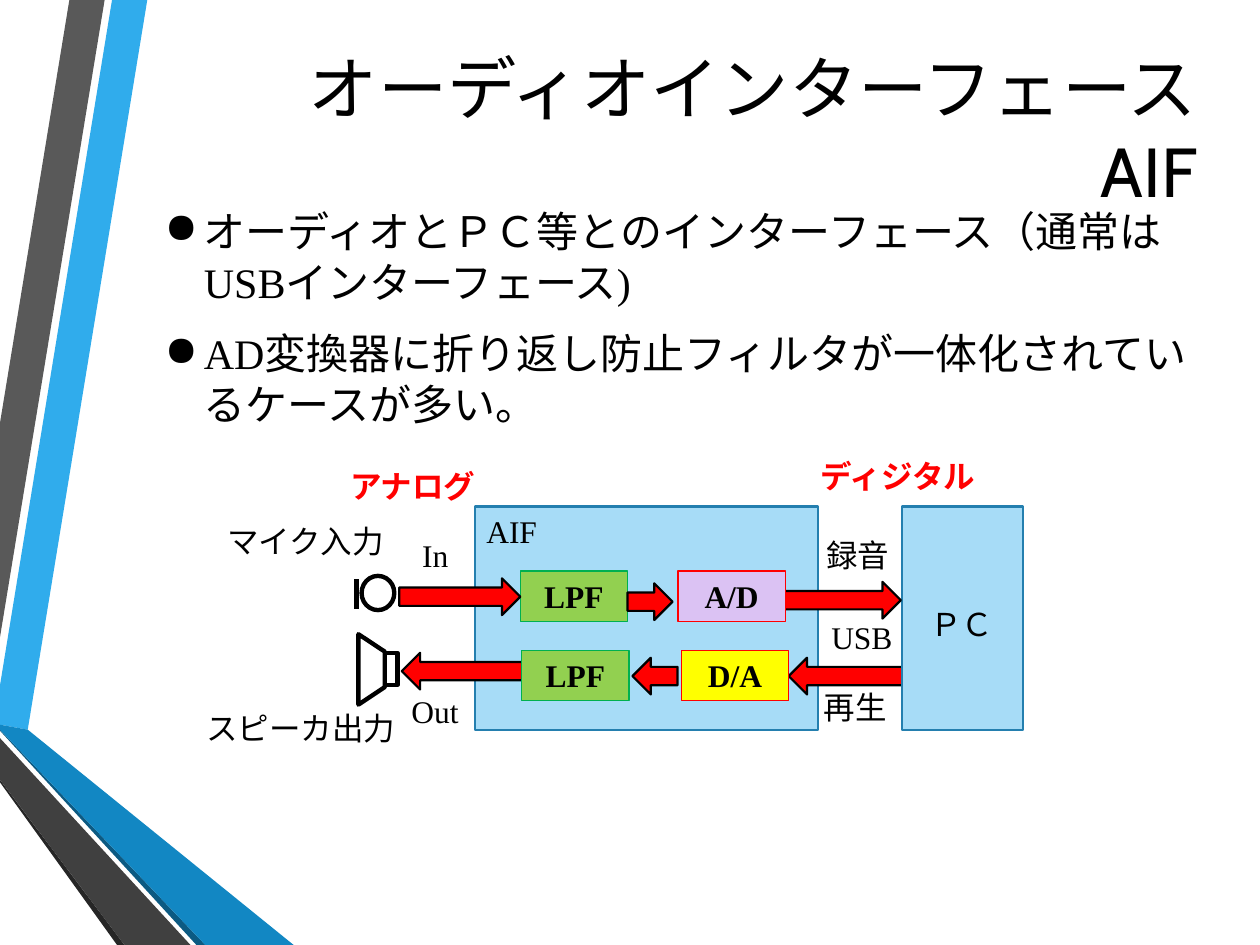
from dataclasses import dataclass

from lxml.etree import SubElement
from pptx import Presentation
from pptx.dml.color import RGBColor
from pptx.enum.shapes import MSO_CONNECTOR, MSO_SHAPE
from pptx.enum.text import MSO_ANCHOR, PP_ALIGN
from pptx.oxml.ns import qn
from pptx.util import Cm, Pt


@dataclass(frozen=True)
class Theme:
    black: str = "000000"
    white: str = "FFFFFF"
    red: str = "FF0000"
    sky: str = "30ACEC"
    blue: str = "1287C3"
    navy: str = "0C5A82"
    gray: str = "595959"
    coal: str = "404040"
    soot: str = "262626"
    pale: str = "A7DCF7"
    edge: str = "247FAF"
    lime: str = "92D050"
    green: str = "00B050"
    lilac: str = "DBC2F3"
    yellow: str = "FFFF00"
    sans: str = "Cabin"
    serif: str = "Times New Roman"
    title: float = 39.6
    body: float = 24
    label: float = 18
    thin: float = 0.75
    line: float = 1.25
    thick: float = 2.5


THEME = Theme()


def rgb(code):
    return RGBColor.from_string(code)


def style(para, size, name=THEME.serif, color=THEME.black, bold=False):
    font = para.font
    font.name, font.size, font.bold = name, Pt(size), bold
    font.color.rgb = rgb(color)


def paint(shape, fill, line=None, width=THEME.line):
    shape.shadow.inherit = False
    if fill:
        shape.fill.solid()
        shape.fill.fore_color.rgb = rgb(fill)
    else:
        shape.fill.background()
    if line:
        shape.line.color.rgb = rgb(line)
        shape.line.width = Pt(width)
    else:
        shape.line.fill.background()
    return shape


def place(shapes, kind, box, fill, line, width=THEME.line):
    shape = shapes.add_shape(kind, *map(Cm, box))
    return paint(shape, fill, line, width)


def write(shape, text, color=THEME.black, bold=False):
    frame = shape.text_frame
    frame.word_wrap = True
    frame.vertical_anchor = MSO_ANCHOR.TOP
    para = frame.paragraphs[0]
    para.text = text
    para.alignment = PP_ALIGN.CENTER
    style(para, THEME.label, color=color, bold=bold)


def ribbons(shapes, x, y):
    bands = [
        (THEME.sky, [(0, 13.82), (0, 14.61), (0.56, 14.71), (2.97, 0), (2.26, 0)]),
        (THEME.gray, [(2.11, 0), (1.4, 0), (0, 8.53), (0, 12.85)]),
        (THEME.soot, [(0, 15.72), (0, 15.77), (2.36, 19.05), (2.51, 19.05)]),
        (THEME.navy, [(0, 14.71), (0, 14.73), (3.96, 19.05), (4.14, 19.05)]),
        (THEME.blue, [(0, 14.71), (4.14, 19.05), (5.92, 19.05), (0.56, 14.71), (0, 14.61)]),
        (THEME.coal, [(0, 15.72), (2.51, 19.05), (3.84, 19.05), (0, 14.88)]),
    ]
    for color, dots in bands:
        first, *rest = [(Cm(x + dx), Cm(y + dy)) for dx, dy in dots]
        path = shapes.build_freeform(*first)
        path.add_line_segments(rest)
        paint(path.convert_to_shape(), color)


def heading(shape, box, lines):
    shape.left, shape.top, shape.width, shape.height = map(Cm, box)
    frame = shape.text_frame
    frame.word_wrap = True
    frame.vertical_anchor = MSO_ANCHOR.MIDDLE
    para = frame.paragraphs[0]
    para.alignment = PP_ALIGN.RIGHT
    for i, line in enumerate(lines):
        if i:
            para.add_line_break()
        para.add_run().text = line
    style(para, THEME.title, THEME.sans)


def bullets(shapes, box, items):
    frame = shapes.add_textbox(*map(Cm, box)).text_frame
    frame.word_wrap = True
    for i, item in enumerate(items):
        para = frame.add_paragraph() if i else frame.paragraphs[0]
        para.text = item
        para.line_spacing = Pt(29)
        para.space_before = para.space_after = Pt(6)
        props = para._p.get_or_add_pPr()
        props.set("marL", str(Cm(0.79)))
        props.set("indent", str(-Cm(0.79)))
        SubElement(props, qn("a:buChar")).set("char", "●")
        style(para, THEME.body)


def device(shapes, x, y):
    place(shapes, MSO_SHAPE.OVAL, (x + 0.1, y, 0.66, 0.69), None, THEME.black, THEME.thick)
    bar = shapes.add_connector(
        MSO_CONNECTOR.STRAIGHT, *map(Cm, (x, y + 0.07, x, y + 0.66)))
    bar.line.color.rgb = rgb(THEME.black)
    bar.line.width = Pt(THEME.thick)
    SubElement(bar._element.spPr, qn("a:effectLst"))


def speaker(shapes, x, y):
    group = shapes.add_group_shape().shapes
    horn = place(group, MSO_SHAPE.TRAPEZOID, (x, y, 1.42, 0.53),
                 THEME.white, THEME.black, THEME.thick)
    horn.adjustments[0] = 0.664
    back = place(group, MSO_SHAPE.RECTANGLE, (x + 0.79, y + 0.13, 0.64, 0.25),
                 THEME.white, THEME.black, THEME.thick)
    horn.rotation = back.rotation = 90


def diagram(shapes, x, y):
    right, left = MSO_SHAPE.RIGHT_ARROW, MSO_SHAPE.LEFT_ARROW

    def panel(dx, width):
        place(shapes, MSO_SHAPE.RECTANGLE, (x + dx, y + 1.12, width, 4.5),
              THEME.pale, THEME.edge)

    def arrow(kind, dx, dy, width):
        place(shapes, kind, (x + dx, y + dy, width, 0.74), THEME.red, THEME.black)

    def block(text, dx, dy, fill, line):
        shape = place(shapes, MSO_SHAPE.RECTANGLE, (x + dx, y + dy, 2.16, 1.02),
                      fill, line, THEME.thin)
        write(shape, text, bold=True)

    def label(text, dx, dy, width, color=THEME.black, bold=False):
        box = shapes.add_textbox(*map(Cm, (x + dx, y + dy, width, 1.02)))
        write(box, text, color, bold)

    panel(6.02, 6.91)
    arrow(left, 12.34, 4.17, 2.36)
    panel(14.63, 2.44)
    arrow(right, 12.24, 2.64, 2.36)
    arrow(left, 4.54, 4.07, 2.44)
    block("LPF", 6.93, 2.42, THEME.lime, THEME.green)
    arrow(right, 4.49, 2.57, 2.44)
    arrow(right, 9.09, 2.67, 0.91)
    arrow(left, 9.19, 4.17, 0.91)
    block("A/D", 10.11, 2.42, THEME.lilac, THEME.red)
    block("LPF", 6.96, 4.02, THEME.lime, THEME.green)
    block("D/A", 10.18, 4.02, THEME.yellow, THEME.red)
    device(shapes, x + 3.63, y + 2.52)
    speaker(shapes, x + 3.22, y + 4.14)
    for note in [
        ("録音", 12.26, 1.6, 2.95),
        ("再生", 12.21, 4.65, 2.95),
        ("ＰＣ", 14.35, 2.98, 2.95),
        ("AIF", 5.28, 1.1, 2.95),
        ("USB", 12.34, 3.25, 2.95),
        ("In", 4.49, 1.6, 1.45),
        ("Out", 4.31, 4.73, 1.8),
        ("マイク入力", 0.76, 1.3, 3.68),
        ("スピーカ出力", 0, 5.08, 5),
        ("アナログ", 2.26, 0.21, 5, THEME.red, True),
        ("ディジタル", 12.04, 0, 5, THEME.red, True),
    ]:
        label(*note)


def main():
    deck = Presentation()
    deck.slide_width, deck.slide_height = Cm(25.4), Cm(19.05)
    slide = deck.slides.add_slide(deck.slide_layouts[5])
    shapes = slide.shapes
    ribbons(shapes, 0, 0)
    heading(shapes.title, (2.34, 1.17, 22.05, 2.84), ["オーディオインターフェース", "AIF"])
    bullets(shapes, (3.07, 4.01, 21.79, 5.13), [
        "オーディオとＰＣ等とのインターフェース（通常はUSBインターフェース)",
        "AD変換器に折り返し防止フィルタが一体化されているケースが多い。",
    ])
    diagram(shapes, 3.56, 9.09)
    deck.save("out.pptx")


if __name__ == "__main__":
    main()
